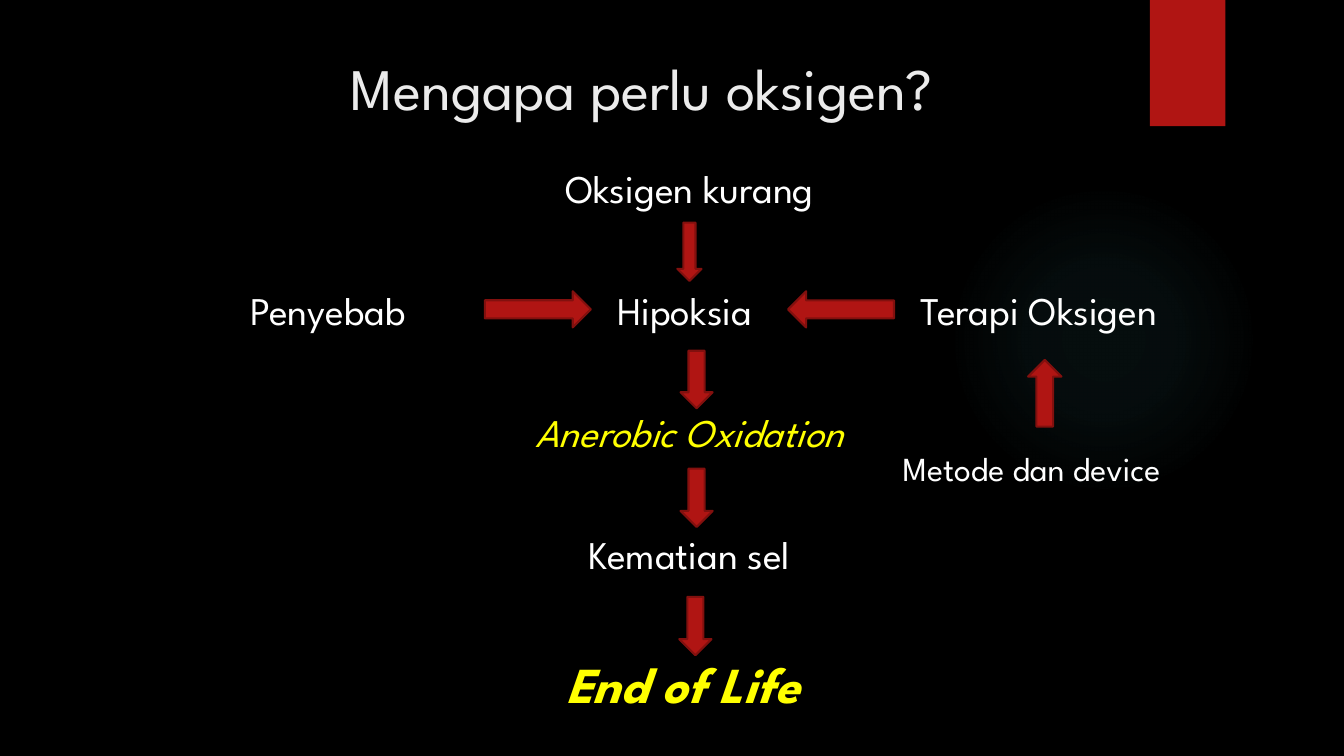
"""Build the slide that explains why oxygen is needed."""
from dataclasses import dataclass, field
from typing import Any

from pptx import Presentation
from pptx.dml.color import RGBColor
from pptx.enum.shapes import MSO_SHAPE
from pptx.enum.text import MSO_ANCHOR, PP_ALIGN
from pptx.oxml import parse_xml
from pptx.oxml.ns import nsdecls, qn
from pptx.shapes.autoshape import Shape
from pptx.slide import Slide
from pptx.util import Cm, Pt

BLACK = RGBColor(0x00, 0x00, 0x00)
WHITE = RGBColor(0xFF, 0xFF, 0xFF)
LIGHT_GREY = RGBColor(0xEB, 0xEB, 0xEB)
YELLOW = RGBColor(0xFF, 0xFF, 0x00)
RED = RGBColor(0xB0, 0x15, 0x13)
DARK_RED = RGBColor(0x82, 0x10, 0x0E)
TEAL = RGBColor(0x50, 0xB9, 0xC1)

FONT_NAME = "League Spartan"
STEP_GAP = Pt(53.7)
GLOW_STOPS = ((0, 7), (36, 6), (69, 0))


@dataclass(frozen=True)
class Box:
    left: float
    top: float
    width: float
    height: float

    def lengths(self) -> tuple[Cm, Cm, Cm, Cm]:
        return Cm(self.left), Cm(self.top), Cm(self.width), Cm(self.height)


@dataclass(frozen=True)
class Line:
    text: str
    size: float = 28
    color: RGBColor = WHITE
    format: dict[str, Any] = field(default_factory=dict)


@dataclass(frozen=True)
class TextBlock:
    box: Box
    lines: tuple[Line, ...]
    alignment: PP_ALIGN = PP_ALIGN.LEFT


@dataclass(frozen=True)
class Arrow:
    kind: MSO_SHAPE
    box: Box
    rotation: float = 0


TEXT_BLOCKS = (
    TextBlock(
        Box(4.24, 1.17, 23.88, 3),
        (Line("Mengapa perlu oksigen?", 42, LIGHT_GREY),),
        PP_ALIGN.CENTER,
    ),
    TextBlock(
        Box(4.04, 4.01, 26.67, 14.15),
        (
            Line("Oksigen kurang"),
            Line("Hipoksia "),
            Line("Anerobic Oxidation", color=YELLOW, format={"italic": True}),
            Line("Kematian sel"),
            Line("End of Life ", 36, YELLOW, {"bold": True, "italic": True}),
        ),
        PP_ALIGN.CENTER,
    ),
    TextBlock(Box(6.07, 7.09, 5.87, 1.45), (Line("Penyebab"),)),
    TextBlock(Box(22.96, 7.09, 8.46, 1.45), (Line("Terapi Oksigen"),)),
    TextBlock(Box(22.5, 11.15, 8.92, 1.27), (Line("Metode dan device", 24),)),
)

ARROWS = (
    Arrow(MSO_SHAPE.DOWN_ARROW, Box(17.07, 5.61, 0.61, 1.47)),
    Arrow(MSO_SHAPE.DOWN_ARROW, Box(17.15, 8.84, 0.81, 1.45)),
    Arrow(MSO_SHAPE.DOWN_ARROW, Box(17.15, 11.81, 0.81, 1.47)),
    Arrow(MSO_SHAPE.DOWN_ARROW, Box(17.12, 15.04, 0.81, 1.47)),
    Arrow(MSO_SHAPE.RIGHT_ARROW, Box(12.22, 7.34, 2.67, 0.91)),
    Arrow(MSO_SHAPE.RIGHT_ARROW, Box(19.86, 7.34, 2.67, 0.91), 180),
    Arrow(MSO_SHAPE.UP_ARROW, Box(25.91, 9.07, 0.84, 1.68)),
)


def add_plain_shape(slide: Slide, kind: MSO_SHAPE, box: Box) -> Shape:
    shape = slide.shapes.add_shape(kind, *box.lengths())
    shape.shadow.inherit = False
    shape.fill.solid()
    shape.fill.fore_color.rgb = RED
    shape.line.fill.background()
    return shape


def add_glow(slide: Slide, box: Box) -> None:
    shape = add_plain_shape(slide, MSO_SHAPE.OVAL, box)
    stops = "".join(
        f'<a:gs pos="{position * 1000}"><a:srgbClr val="{TEAL}">'
        f'<a:alpha val="{alpha * 1000}"/></a:srgbClr></a:gs>'
        for position, alpha in GLOW_STOPS
    )
    gradient = parse_xml(
        f'<a:gradFill {nsdecls("a")} rotWithShape="1"><a:gsLst>{stops}</a:gsLst>'
        '<a:path path="circle"><a:fillToRect l="50000" t="50000" r="50000" b="50000"/>'
        "</a:path></a:gradFill>"
    )
    properties = shape.element.spPr
    properties.replace(properties.find(qn("a:solidFill")), gradient)


def add_arrow(slide: Slide, arrow: Arrow) -> None:
    shape = add_plain_shape(slide, arrow.kind, arrow.box)
    shape.rotation = arrow.rotation
    shape.line.color.rgb = DARK_RED
    shape.line.width = Pt(1.5)


def add_text_block(slide: Slide, block: TextBlock) -> None:
    frame = slide.shapes.add_textbox(*block.box.lengths()).text_frame
    frame.word_wrap = True
    frame.vertical_anchor = MSO_ANCHOR.TOP
    for index, line in enumerate(block.lines):
        paragraph = frame.add_paragraph() if index else frame.paragraphs[0]
        paragraph.alignment = block.alignment
        if index:
            paragraph.space_before = STEP_GAP
        run = paragraph.add_run()
        run.text = line.text
        values = {"name": FONT_NAME, "size": Pt(line.size), **line.format}
        for name, value in values.items():
            setattr(run.font, name, value)
        run.font.color.rgb = line.color


def main() -> None:
    presentation = Presentation()
    presentation.slide_width = Cm(33.87)
    presentation.slide_height = Cm(19.05)
    slide = presentation.slides.add_slide(presentation.slide_layouts[6])
    slide.background.fill.solid()
    slide.background.fill.fore_color.rgb = BLACK
    add_glow(slide, Box(23.9, 4.65, 7.82, 7.82))
    add_plain_shape(slide, MSO_SHAPE.RECTANGLE, Box(28.98, 0, 1.9, 3.18))
    for block in TEXT_BLOCKS:
        add_text_block(slide, block)
    for arrow in ARROWS:
        add_arrow(slide, arrow)
    presentation.save("out.pptx")


if __name__ == "__main__":
    main()
